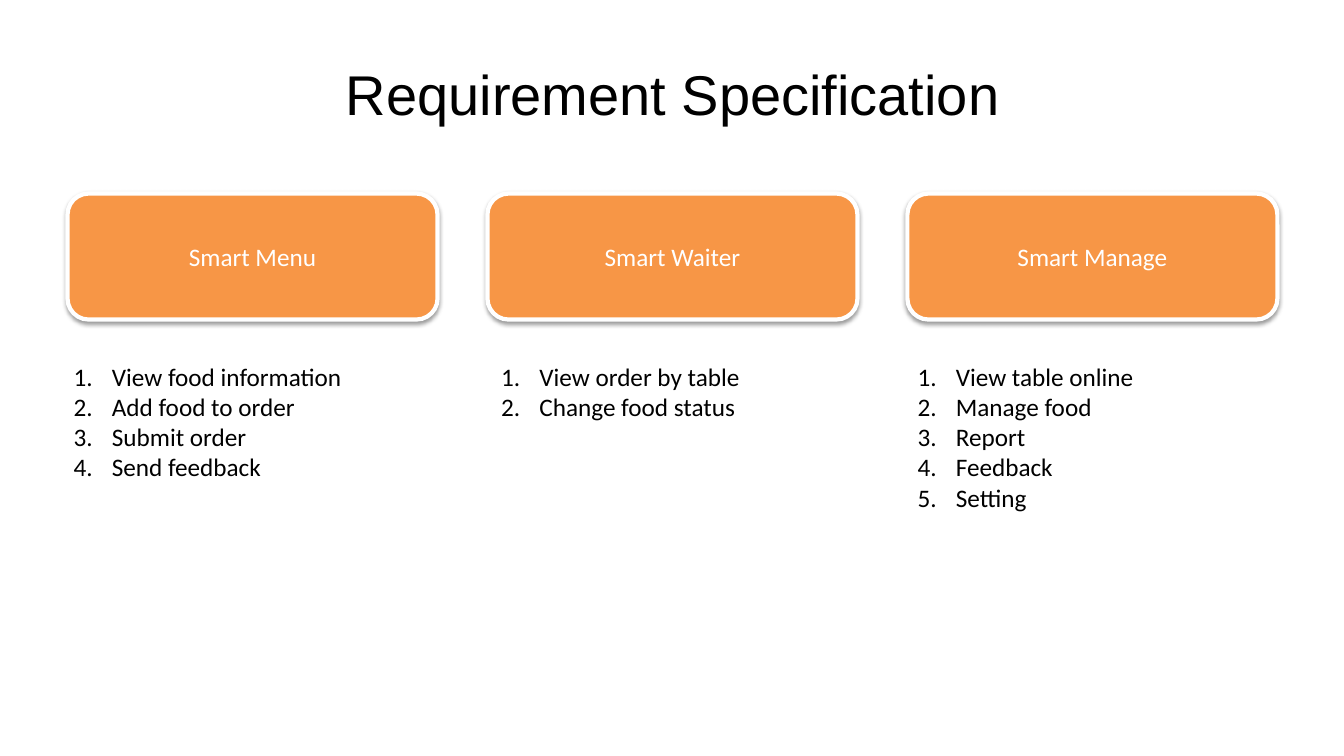
import dataclasses

import lxml.etree
import pptx
import pptx.dml.color
import pptx.enum.shapes
import pptx.enum.text
import pptx.oxml.ns
import pptx.util

Inches = pptx.util.Inches
Pt = pptx.util.Pt
RGBColor = pptx.dml.color.RGBColor
qn = pptx.oxml.ns.qn
ALIGN = pptx.enum.text.PP_ALIGN
ANCHOR = pptx.enum.text.MSO_ANCHOR


@dataclasses.dataclass(frozen=True)
class Theme:
    ink: str = "000000"
    paper: str = "FFFFFF"
    accent: str = "F79646"
    title_font: str = "Arial"
    body_font: str = "Calibri"
    title_size: int = 40
    body_size: int = 18


theme = Theme()


def add_span(para, text, font, size, color):
    span = para.add_run()
    span.text = text
    span.font.name = font
    span.font.size = Pt(size)
    span.font.bold = False
    span.font.color.rgb = RGBColor.from_string(color)


def add_shadow(box):
    box.shadow.inherit = False
    effects = box._element.spPr.find(qn("a:effectLst"))
    shadow = lxml.etree.SubElement(
        effects, qn("a:outerShdw"), blurRad=str(Pt(3.1)), dist=str(Pt(1.6)),
        dir="5400000", rotWithShape="0")
    color = lxml.etree.SubElement(shadow, qn("a:srgbClr"), val=theme.ink)
    lxml.etree.SubElement(color, qn("a:alpha"), val="38000")


deck = pptx.Presentation()
deck.slide_width = Inches(13.33)
deck.slide_height = Inches(7.5)
page = deck.slides.add_slide(deck.slide_layouts.get_by_name("Comparison"))
page.background.fill.solid()
page.background.fill.fore_color.rgb = RGBColor.from_string(theme.paper)

title, *lists = page.placeholders
spare = lists.pop()
spare._element.getparent().remove(spare._element)

title.left, title.top = Inches(0.67), Inches(0.3)
title.width, title.height = Inches(12), Inches(1.25)
title.text_frame.vertical_anchor = ANCHOR.MIDDLE
para = title.text_frame.paragraphs[0]
para.alignment = ALIGN.CENTER
add_span(para, "Requirement Specification", theme.title_font, theme.title_size, theme.ink)

modules = [
    ("Smart Menu", 0.63, 3.71,
     ["View food information", "Add food to order", "Submit order", "Send feedback"]),
    ("Smart Waiter", 4.87, 3.63,
     ["View order by table", "Change food status"]),
    ("Smart Manage", 9, 3.67,
     ["View table online", "Manage food", "Report", "Feedback", "Setting"]),
]
card_left, card_pitch = 0.67, 4.165

for column, (name, list_left, list_width, features) in enumerate(modules):
    card = page.shapes.add_shape(
        pptx.enum.shapes.MSO_SHAPE.ROUNDED_RECTANGLE,
        Inches(card_left + column * card_pitch), Inches(1.92), Inches(3.67), Inches(1.25))
    card.fill.solid()
    card.fill.fore_color.rgb = RGBColor.from_string(theme.accent)
    card.line.color.rgb = RGBColor.from_string(theme.paper)
    card.line.width = Pt(3)
    add_shadow(card)
    card.text_frame.vertical_anchor = ANCHOR.MIDDLE
    para = card.text_frame.paragraphs[0]
    para.alignment = ALIGN.CENTER
    add_span(para, name, theme.body_font, theme.body_size, theme.paper)

    box = lists[column]
    box.left, box.top = Inches(list_left), Inches(3.53)
    box.width, box.height = Inches(list_width), Inches(0.1 + 0.303 * len(features))
    frame = box.text_frame
    frame.word_wrap = True
    frame.auto_size = pptx.enum.text.MSO_AUTO_SIZE.SHAPE_TO_FIT_TEXT
    frame.vertical_anchor = ANCHOR.TOP
    for row, feature in enumerate(features):
        para = frame.add_paragraph() if row else frame.paragraphs[0]
        para.alignment = ALIGN.LEFT
        para.space_before = Pt(0)
        properties = para._p.get_or_add_pPr()
        properties.set("marL", str(Inches(0.38)))
        properties.set("indent", str(Inches(-0.38)))
        lxml.etree.SubElement(properties, qn("a:buFont"), typeface=theme.body_font)
        lxml.etree.SubElement(properties, qn("a:buAutoNum"), type="arabicPeriod")
        add_span(para, feature, theme.body_font, theme.body_size, theme.ink)

deck.save("out.pptx")
